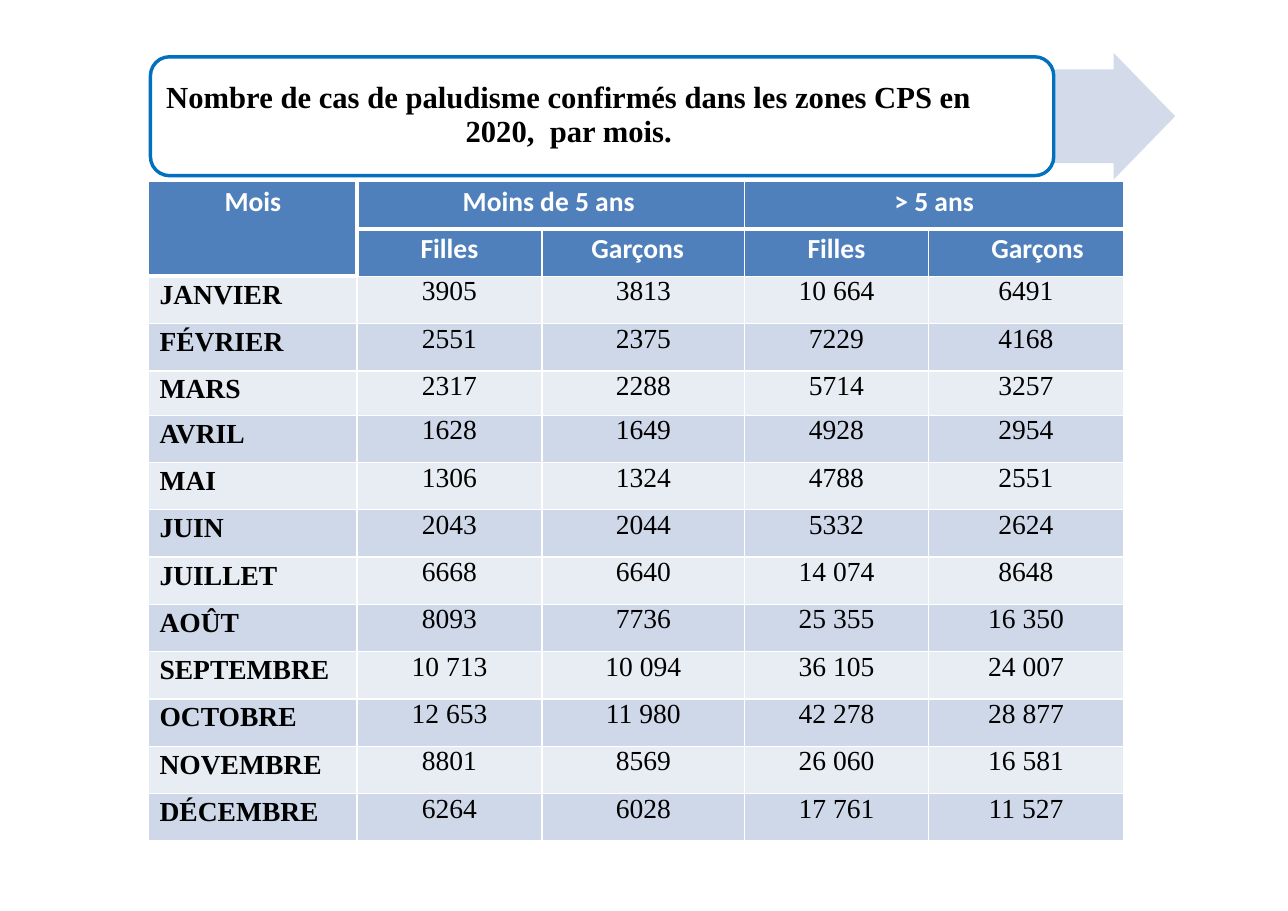
from lxml import etree
from pptx import Presentation
from pptx import util as u
from pptx.dml.color import RGBColor
from pptx.enum import shapes, text
from pptx.oxml import ns

WHITE, BLACK = "FFFFFF", "000000"
HEADER, BORDER = "4F80BC", "0070BF"
BANDS = ("E8EDF4", "CFD8E8")
SERIF, SANS = "Times New Roman", "Calibri"
COLUMN_WIDTHS = (4.8, 4.27, 4.67, 4.24, 4.5)
ROW_HEIGHT, MARCH_HEIGHT = 1.09, 1.02
TITLE = "Nombre de cas de paludisme confirmés dans les zones CPS en 2020,  par mois."
GROUPS = ("Mois", "Moins de 5 ans", "", "> 5 ans", "")
SEXES = ("", "Filles", "Garçons", "Filles", "Garçons")
HEADER_INDENTS = {(0, 1): 2.44, (1, 2): 1.14, (1, 4): 1.45}
CASES = (
    ("JANVIER", "3905", "3813", "10 664", "6491"),
    ("FÉVRIER", "2551", "2375", "7229", "4168"),
    ("MARS", "2317", "2288", "5714", "3257"),
    ("AVRIL", "1628", "1649", "4928", "2954"),
    ("MAI", "1306", "1324", "4788", "2551"),
    ("JUIN", "2043", "2044", "5332", "2624"),
    ("JUILLET", "6668", "6640", "14 074", "8648"),
    ("AOÛT", "8093", "7736", "25 355", "16 350"),
    ("SEPTEMBRE", "10 713", "10 094", "36 105", "24 007"),
    ("OCTOBRE", "12 653", "11 980", "42 278", "28 877"),
    ("NOVEMBRE", "8801", "8569", "26 060", "16 581"),
    ("DÉCEMBRE", "6264", "6028", "17 761", "11 527"),
)


def colour(value):
    """Turn a hex string into a colour."""
    return RGBColor.from_string(value)


def write(frame, words, size=18, font=SERIF, ink=BLACK, bold=False,
          before=0, indent=None, leading=None):
    """Write one paragraph, centred unless it has an indent."""
    para = frame.paragraphs[0]
    para.alignment = text.PP_ALIGN.CENTER if indent is None else text.PP_ALIGN.LEFT
    para.space_before = u.Pt(before)
    if leading:
        para.line_spacing = u.Pt(leading)
    if indent is not None:
        properties = para._p.get_or_add_pPr()
        properties.set("marL", str(u.Cm(indent)))
        properties.set("indent", "0")
    span = para.add_run()
    span.text = words
    span.font.size, span.font.name, span.font.bold = u.Pt(size), font, bold
    span.font.color.rgb = colour(ink)


def add_shape(page, kind, left, top, width, height, fill):
    """Add a flat filled shape without outline."""
    shape = page.shapes.add_shape(
        kind, u.Cm(left), u.Cm(top), u.Cm(width), u.Cm(height))
    shape.shadow.inherit = False
    shape.fill.solid()
    shape.fill.fore_color.rgb = colour(fill)
    shape.line.fill.background()
    return shape


def draw_banner(page, left, top, width, height):
    """Draw the title frame with its arrow, then the title on top."""
    frame_width = 20.83
    arrow = add_shape(page, shapes.MSO_SHAPE.RIGHT_ARROW, left + frame_width,
                      top, width - frame_width, height, BANDS[1])
    arrow.adjustments[0], arrow.adjustments[1] = 0.74, 0.5
    tint = arrow.fill._xPr.find(".//" + ns.qn("a:srgbClr"))
    etree.SubElement(tint, ns.qn("a:alpha"), val="90000")

    frame = add_shape(page, shapes.MSO_SHAPE.ROUNDED_RECTANGLE, left + 0.04,
                      top + 0.09, frame_width, height - 0.18, WHITE)
    frame.adjustments[0] = 0.16
    frame.line.color.rgb = colour(BORDER)
    frame.line.width = u.Pt(2.25)

    title = page.shapes.title
    title.left, title.top = u.Cm(left - 0.36), u.Cm(top + 0.53)
    title.width, title.height = u.Cm(20.09), u.Cm(1.68)
    title.element.getparent().append(title.element)
    body = title.text_frame
    body.word_wrap, body.auto_size = True, text.MSO_AUTO_SIZE.NONE
    body.vertical_anchor = text.MSO_ANCHOR.MIDDLE
    body.margin_left = body.margin_right = body.margin_bottom = 0
    body.margin_top = u.Cm(0.12)
    write(body, TITLE, size=20, bold=True, before=3.4, leading=22.1)


def thick_below(row, column):
    """Tell whether the rule under a cell is a thick one."""
    return row == 0 or (row, column) == (1, 0)


def set_borders(cell, row, column):
    """Draw white rules, thick between the header cells."""
    thick = {
        "lnL": row < 2 and column == 1,
        "lnR": row < 2 and column == 0,
        "lnT": row > 0 and thick_below(row - 1, column),
        "lnB": thick_below(row, column),
    }
    properties = cell._tc.get_or_add_tcPr()
    for edge, heavy in thick.items():
        line = etree.SubElement(properties, ns.qn("a:" + edge),
                                w=str(u.Pt(3 if heavy else 1)))
        paint = etree.SubElement(line, ns.qn("a:solidFill"))
        etree.SubElement(paint, ns.qn("a:srgbClr"), val=WHITE)


def format_cell(cell, words, row, column):
    """Fill one cell and write its text by its place in the table."""
    header, month = row < 2, row >= 2 and column == 0
    cell.margin_left = cell.margin_right = cell.margin_bottom = 0
    cell.margin_top = u.Cm(0.08 if header or month else 0)
    set_borders(cell, row, column)
    cell.fill.solid()
    cell.fill.fore_color.rgb = colour(HEADER if header else BANDS[row % 2])
    if not words:
        return
    if header:
        write(cell.text_frame, words, font=SANS, ink=WHITE, bold=True,
              before=2.4, indent=HEADER_INDENTS.get((row, column)))
    elif month:
        write(cell.text_frame, words, bold=True, before=2.4, indent=0.25)
    else:
        write(cell.text_frame, words)


def draw_cases(page, left, top):
    """Draw the monthly table of cases by age and sex."""
    rows = (GROUPS, SEXES) + CASES
    heights = [MARCH_HEIGHT if row[0] == "MARS" else ROW_HEIGHT for row in rows]
    table = page.shapes.add_table(
        len(rows), len(GROUPS), u.Cm(left), u.Cm(top),
        u.Cm(sum(COLUMN_WIDTHS)), u.Cm(sum(heights))).table
    for column, width in zip(table.columns, COLUMN_WIDTHS):
        column.width = u.Cm(width)
    for line, height in zip(table.rows, heights):
        line.height = u.Cm(height)
    for row, values in enumerate(rows):
        for column, words in enumerate(values):
            format_cell(table.cell(row, column), words, row, column)
    for first, last in (((0, 0), (1, 0)), ((0, 1), (0, 2)), ((0, 3), (0, 4))):
        table.cell(*first).merge(table.cell(*last))


def main():
    """Build the slide and save it."""
    deck = Presentation()
    deck.slide_width, deck.slide_height = u.Cm(29.7), u.Cm(21)
    page = deck.slides.add_slide(deck.slide_layouts[5])
    draw_cases(page, 3.43, 4.19)
    draw_banner(page, 3.43, 1.22, 23.67, 2.92)
    deck.save("out.pptx")


if __name__ == "__main__":
    main()
